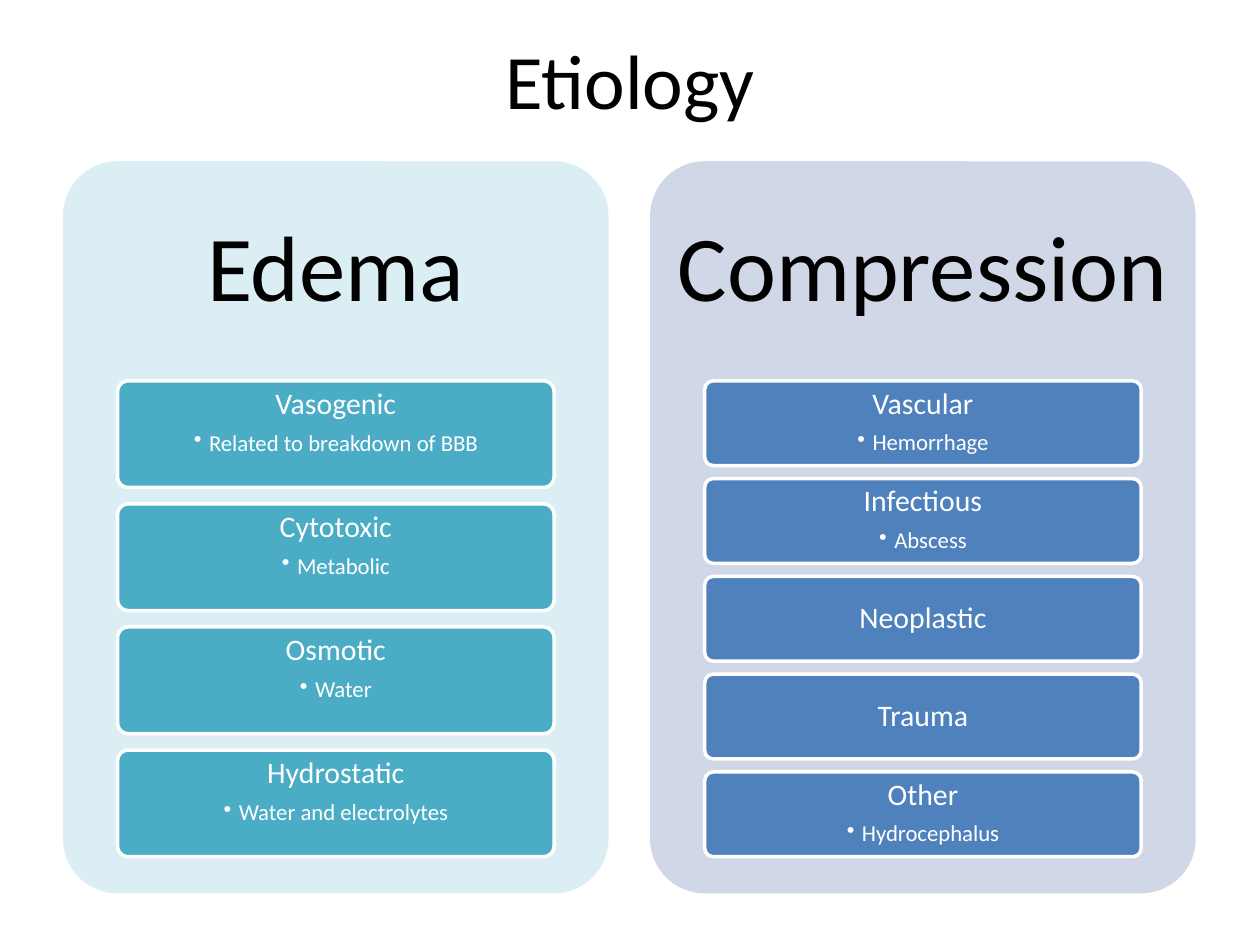
import pptx
import pptx.util
import pptx.dml.color
import pptx.enum.shapes
import pptx.enum.text
import lxml.etree
from pptx.util import Inches, Pt

ANCHOR = pptx.enum.text.MSO_ANCHOR
ROUNDED = pptx.enum.shapes.MSO_SHAPE.ROUNDED_RECTANGLE

# Content: panels of (heading, panel colour, card colour, cards of (cause, detail))
TITLE = "Etiology"
PANELS = [
    ("Edema", "pale_teal", "teal", [
        ("Vasogenic", "Related to breakdown of BBB"),
        ("Cytotoxic", "Metabolic"),
        ("Osmotic", "Water"),
        ("Hydrostatic", "Water and electrolytes"),
    ]),
    ("Compression", "pale_blue", "blue", [
        ("Vascular", "Hemorrhage"),
        ("Infectious", "Abscess"),
        ("Neoplastic", None),
        ("Trauma", None),
        ("Other", "Hydrocephalus"),
    ]),
]
COLORS = {
    "black": "000000", "white": "FFFFFF",
    "pale_teal": "DBEEF4", "teal": "4BACC6",
    "pale_blue": "D0D8E8", "blue": "4F81BD",
}

# Layout in inches
PANEL_LEFT, PANEL_TOP, PANEL_W, PANEL_H = 0.5, 1.28, 4.33, 5.81
PANEL_PITCH = 4.66
HEADING_H = 0.3 * PANEL_H
CARD_W = 0.8 * PANEL_W
CARDS_TOP = PANEL_TOP + HEADING_H
CARDS_H = 0.65 * PANEL_H
GAP_RATIO = 0.154  # gap between cards, as a share of the card height


def rgb(name):
    return pptx.dml.color.RGBColor.from_string(COLORS[name])


def set_frame(tf, anchor, x_inset, y_inset):
    tf.word_wrap = True
    tf.vertical_anchor = anchor
    tf.margin_left = tf.margin_right = Inches(x_inset)
    tf.margin_top = tf.margin_bottom = Inches(y_inset)


def add_text(tf, text, size, color="black", spacing=0.9, after=0, bullet=False):
    p = tf.add_paragraph() if tf.text else tf.paragraphs[0]
    p.alignment = pptx.enum.text.PP_ALIGN.CENTER
    p.line_spacing = spacing
    p.space_before, p.space_after = Pt(0), Pt(after)
    if bullet:
        p.level = 1
        pPr = p._p.get_or_add_pPr()
        pPr.set("marL", str(Inches(0.12)))
        pPr.set("indent", str(Inches(-0.12)))
        bu = lxml.etree.SubElement(pPr, pptx.oxml.ns.qn("a:buChar"))
        bu.set("char", "•")
    r = p.add_run()
    r.text = text
    r.font.name, r.font.size = "Calibri", Pt(size)
    r.font.color.rgb = rgb(color)


def add_box(s, left, top, width, height, fill, line=None):
    sp = s.shapes.add_shape(ROUNDED, Inches(left), Inches(top),
                            Inches(width), Inches(height))
    sp.adjustments[0] = 0.1
    sp.shadow.inherit = False
    sp.fill.solid()
    sp.fill.fore_color.rgb = rgb(fill)
    if line:
        sp.line.color.rgb = rgb(line)
        sp.line.width = Pt(2)
    else:
        sp.line.fill.background()
    return sp


def add_panel(s, left, heading, panel_color, card_color, cards):
    add_box(s, left, PANEL_TOP, PANEL_W, PANEL_H, panel_color)

    # Heading, with side insets narrow enough for the longest word
    tb = s.shapes.add_textbox(Inches(left), Inches(PANEL_TOP),
                              Inches(PANEL_W), Inches(HEADING_H))
    set_frame(tb.text_frame, ANCHOR.MIDDLE, 0.1, 0.22)
    add_text(tb.text_frame, heading, 53)

    # Cards share the height below the heading
    n = len(cards)
    card_h = CARDS_H / (n + (n - 1) * GAP_RATIO)
    card_left = left + (PANEL_W - CARD_W) / 2
    for i, (cause, detail) in enumerate(cards):
        top = CARDS_TOP + i * card_h * (1 + GAP_RATIO)
        tf = add_box(s, card_left, top, CARD_W, card_h, card_color, "white").text_frame
        set_frame(tf, ANCHOR.TOP if detail else ANCHOR.MIDDLE, 0.05, 0.04)
        add_text(tf, cause, 17, color="white", after=6 if detail else 0)
        if detail:
            add_text(tf, detail, 13, color="white", after=2, bullet=True)


def main():
    prs = pptx.Presentation()
    prs.slide_width, prs.slide_height = Inches(10), Inches(7.5)
    s = prs.slides.add_slide(prs.slide_layouts[5])

    # Title
    title = s.shapes.title
    title.left, title.top = Inches(0.5), Inches(0)
    title.width, title.height = Inches(9), Inches(1.25)
    set_frame(title.text_frame, ANCHOR.MIDDLE, 0.1, 0.05)
    add_text(title.text_frame, TITLE, 44, spacing=1.0)

    for i, panel in enumerate(PANELS):
        add_panel(s, PANEL_LEFT + i * PANEL_PITCH, *panel)

    prs.save("out.pptx")


if __name__ == "__main__":
    main()
